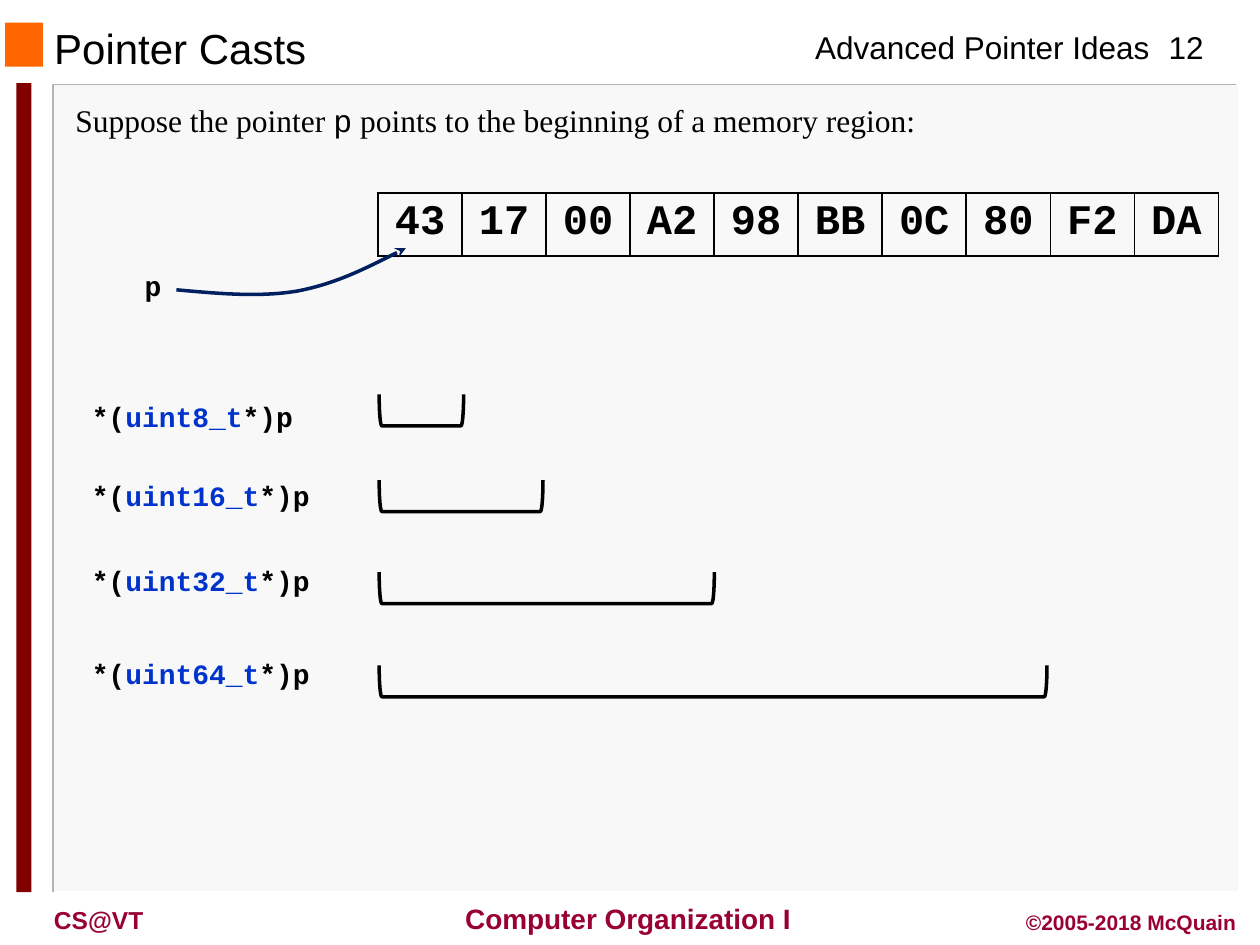
from lxml import etree
from pptx import Presentation
from pptx.dml.color import RGBColor
from pptx.enum.shapes import MSO_SHAPE
from pptx.enum.text import MSO_ANCHOR, PP_ALIGN
from pptx.oxml import parse_xml
from pptx.oxml.ns import nsdecls, qn
from pptx.util import Inches, Pt

RECTANGLE, BRACKET = MSO_SHAPE.RECTANGLE, MSO_SHAPE.LEFT_BRACKET
LEFT, CENTER, RIGHT = PP_ALIGN.LEFT, PP_ALIGN.CENTER, PP_ALIGN.RIGHT
TOP, MIDDLE = MSO_ANCHOR.TOP, MSO_ANCHOR.MIDDLE

THEME = {
    "ink": "000000", "panel": "F8F8F8", "edge": "B2B2B2", "white": "FFFFFF",
    "orange": "FF6600", "maroon": "800000", "footer": "990033",
    "type": "0033CC", "arrow": "002060",
    "sans": "Arial", "serif": "Times New Roman", "mono": "Courier New",
    "title": 24, "body": 18, "code": 16, "course": 16, "school": 14, "credit": 12,
}


def color(name):
    return RGBColor.from_string(THEME[name])


def fill_text(frame, runs, align=LEFT, anchor=TOP, wrap=True):
    """Write runs of (text, font, size, colour, bold), all named in THEME."""
    for name, value in {"word_wrap": wrap, "vertical_anchor": anchor}.items():
        setattr(frame, name, value)
    paragraph = frame.paragraphs[0]
    paragraph.alignment = align
    for text, font, size, ink, bold in runs:
        run = paragraph.add_run()
        run.text = text
        run.font.color.rgb = color(ink)
        formats = {"name": THEME[font], "size": Pt(THEME[size]), "bold": bold}
        for name, value in formats.items():
            setattr(run.font, name, value)


presentation = Presentation()
presentation.slide_width, presentation.slide_height = Inches(10), Inches(7.5)
slide = presentation.slides.add_slide(presentation.slide_layouts[5])
shapes = slide.shapes

# Frame: panel, orange square, maroon bar
for box, fill in [
    ((0.43, 0.67, 9.4, 6.41), "panel"),
    ((0.04, 0.18, 0.3, 0.35), "orange"),
    ((0.13, 0.66, 0.12, 6.42), "maroon"),
]:
    block = shapes.add_shape(RECTANGLE, *map(Inches, box))
    block.shadow.inherit = False
    block.fill.solid()
    block.fill.fore_color.rgb = color(fill)
    block.line.fill.background()

# Panel edges: grey top left, white bottom right
for points, ink in [
    ([(9.81, 0.67), (0.42, 0.67), (0.42, 7.08)], "edge"),
    ([(9.83, 0.67), (9.83, 7.08), (0.44, 7.08)], "white"),
]:
    corners = [(Inches(x), Inches(y)) for x, y in points]
    builder = shapes.build_freeform(*corners[0])
    builder.add_line_segments(corners[1:], close=False)
    edge = builder.convert_to_shape()
    edge.shadow.inherit = False
    edge.fill.background()
    edge.line.color.rgb = color(ink)
    edge.line.width = Pt(1)

# Title
title = shapes.title
title.left, title.top, title.width, title.height = map(Inches, (0.33, 0.19, 6.33, 0.38))
fill_text(title.text_frame, [("Pointer Casts", "sans", "title", "ink", False)], anchor=MIDDLE)

# Header, footer, sentence and pointer name
for box, runs, align, wrap in [
    ((6.37, 0.17, 2.88, 0.4),
     [("Advanced Pointer Ideas", "sans", "body", "ink", False)], LEFT, False),
    ((9.08, 0.17, 0.67, 0.4), [("12", "sans", "body", "ink", False)], CENTER, True),
    ((3.53, 7.11, 2.91, 0.37),
     [("Computer Organization I", "sans", "course", "footer", True)], CENTER, False),
    ((0.33, 7.13, 1.5, 0.33), [("CS@VT", "sans", "school", "footer", True)], LEFT, True),
    ((7.83, 7.17, 2.08, 0.3),
     [("©2005-2018 McQuain", "sans", "credit", "footer", True)], RIGHT, True),
    ((0.5, 0.75, 7.33, 0.4),
     [("Suppose the pointer ", "serif", "body", "ink", False),
      ("p", "mono", "body", "ink", False),
      (" points to the beginning of a memory region:", "serif", "body", "ink", False)],
     LEFT, True),
    ((1.05, 2.08, 0.4, 0.37), [("p", "mono", "code", "ink", True)], LEFT, True),
]:
    text_box = shapes.add_textbox(*map(Inches, box))
    fill_text(text_box.text_frame, runs, align, wrap=wrap)

# Memory bytes
memory = "43 17 00 A2 98 BB 0C 80 F2 DA".split()
table = shapes.add_table(
    1, len(memory), Inches(3), Inches(1.53), Inches(6.67), Inches(0.5)).table
table.first_row = table.horz_banding = False
for column, byte in enumerate(memory):
    table.columns[column].width = Inches(6.67 / len(memory))
    cell = table.cell(0, column)
    fill_text(cell.text_frame, [(byte, "mono", "title", "ink", True)], CENTER)
    properties = cell._tc.get_or_add_tcPr()
    for side in ("lnL", "lnR", "lnT", "lnB"):
        properties.append(parse_xml(
            f'<a:{side} {nsdecls("a")} w="{Pt(1)}"><a:solidFill>'
            f'<a:srgbClr val="{THEME["ink"]}"/></a:solidFill></a:{side}>'))
    cell.fill.background()

# Curved arrow from p to the first byte: each three points make one Bézier piece
curve = [(1.4, 2.3), (1.73, 2.33), (2.06, 2.36), (2.36, 2.31),
         (2.67, 2.25), (2.94, 2.11), (3.22, 1.97)]
points = [(Inches(x), Inches(y)) for x, y in curve]
builder = shapes.build_freeform(*points[0])
builder.add_line_segments(points[1:], close=False)
arrow = builder.convert_to_shape()
arrow.shadow.inherit = False
arrow.fill.background()
arrow.line.color.rgb = color("arrow")
arrow.line.width = Pt(2)
segments = list(arrow._element.iter(qn("a:lnTo")))
for start in range(0, len(segments), 3):
    bezier = etree.Element(qn("a:cubicBezTo"))
    segments[start].addprevious(bezier)
    for segment in segments[start:start + 3]:
        bezier.append(segment[0])
        segment.getparent().remove(segment)
etree.SubElement(arrow.line._get_or_add_ln(), qn("a:tailEnd"), type="stealth")

# Casts, each with a bracket under the bytes it reads
bracket_depth = 0.25
for type_name, label_top, bracket_top, span in [
    ("uint8_t", 3.12, 3.13, 0.67),
    ("uint16_t", 3.75, 3.81, 1.3),
    ("uint32_t", 4.42, 4.54, 2.66),
    ("uint64_t", 5.16, 5.28, 5.3),
]:
    label = shapes.add_textbox(Inches(0.63), Inches(label_top), Inches(2.08), Inches(0.37))
    fill_text(label.text_frame, [
        ("*(", "mono", "code", "ink", True),
        (type_name, "mono", "code", "type", True),
        ("*)p", "mono", "code", "ink", True),
    ])
    # The bracket is turned about its centre, so its box stands upright
    offset = (span - bracket_depth) / 2
    bracket = shapes.add_shape(
        BRACKET, Inches(3.01 + offset), Inches(bracket_top - offset),
        Inches(bracket_depth), Inches(span))
    bracket.rotation = 270
    bracket.shadow.inherit = False
    bracket.fill.background()
    bracket.line.color.rgb = color("ink")
    bracket.line.width = Pt(2)

presentation.save("out.pptx")
